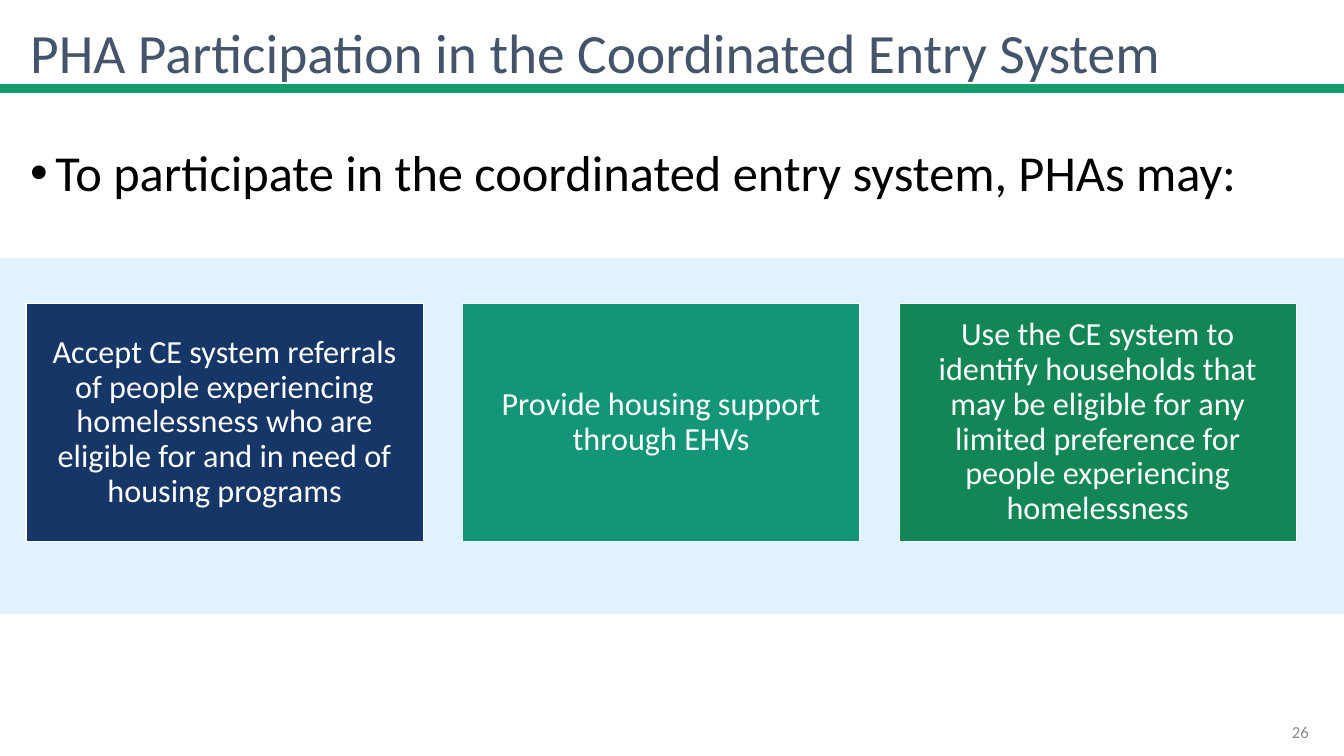
from dataclasses import dataclass

from lxml import etree
from pptx import Presentation
from pptx.dml.color import RGBColor
from pptx.enum.shapes import MSO_CONNECTOR, MSO_SHAPE
from pptx.enum.text import MSO_ANCHOR, PP_ALIGN
from pptx.oxml.ns import qn
from pptx.util import Inches, Pt

RECT, STRAIGHT = MSO_SHAPE.RECTANGLE, MSO_CONNECTOR.STRAIGHT
TOP, MIDDLE = MSO_ANCHOR.TOP, MSO_ANCHOR.MIDDLE
LEFT, CENTER, RIGHT = PP_ALIGN.LEFT, PP_ALIGN.CENTER, PP_ALIGN.RIGHT


@dataclass(frozen=True)
class Theme:
    font: str = "Calibri"
    title: str = "44546A"
    body: str = "000000"
    page: str = "8C8C8C"
    light: str = "FFFFFF"
    rule: str = "149B6A"
    band: str = "DFF2FD"
    cards: tuple = ("163667", "139677", "128654")
    title_size: float = 39.6
    body_size: int = 36
    card_size: int = 23
    page_size: int = 12


class Deck:
    """Draws themed elements on a slide, placed in percent of its size."""

    def __init__(self, theme):
        self.t = theme
        self.prs = Presentation()
        self.prs.slide_width, self.prs.slide_height = Inches(13.33), Inches(7.5)
        self.s = self.prs.slides.add_slide(self.prs.slide_layouts[5])

    def box(self, x, y, w, h):
        sw, sh = self.prs.slide_width, self.prs.slide_height
        return [int(share * side / 100) for share, side in zip((x, y, w, h), (sw, sh, sw, sh))]

    def set_text(self, sp, text, size, color, align=LEFT, anchor=MIDDLE, spacing=0.9):
        tf = sp.text_frame
        tf.word_wrap, tf.vertical_anchor = True, anchor
        p = tf.paragraphs[0]
        p.text, p.alignment, p.line_spacing = text, align, spacing
        p.font.name, p.font.size = self.t.font, Pt(size)
        p.font.color.rgb = RGBColor.from_string(color)
        return p

    def title(self, text, *place):
        sp = self.s.shapes.title
        sp.left, sp.top, sp.width, sp.height = self.box(*place)
        self.set_text(sp, text, self.t.title_size, self.t.title)

    def text(self, text, size, color, *place, **style):
        sp = self.s.shapes.add_textbox(*self.box(*place))
        return self.set_text(sp, text, size, color, **style)

    def bullet(self, text, *place):
        p = self.text(text, self.t.body_size, self.t.body, *place, anchor=TOP)
        p.space_before = Pt(10)
        pPr = p._p.get_or_add_pPr()
        pPr.set("marL", str(Inches(0.25)))
        pPr.set("indent", str(-Inches(0.25)))
        bullet_font = etree.Element(qn("a:buFont"), typeface="Arial")
        bullet_char = etree.Element(qn("a:buChar"), char="•")
        pPr.find(qn("a:spcBef")).addnext(bullet_font)
        bullet_font.addnext(bullet_char)

    def rect(self, fill, line, *place):
        sp = self.s.shapes.add_shape(RECT, *self.box(*place))
        sp.shadow.inherit = False
        sp.fill.solid()
        sp.fill.fore_color.rgb = RGBColor.from_string(fill)
        sp.line.color.rgb = RGBColor.from_string(line)
        sp.line.width = Pt(1)
        return sp

    def card(self, text, fill, *place):
        sp = self.rect(fill, self.t.light, *place)
        tf = sp.text_frame
        tf.margin_left = tf.margin_right = tf.margin_top = tf.margin_bottom = Inches(0.1)
        self.set_text(sp, text, self.t.card_size, self.t.light, align=CENTER)

    def rule(self, y):
        x, top, w, _ = self.box(0, y, 100, 0)
        line = self.s.shapes.add_connector(STRAIGHT, x, top, x + w, top)
        line.line.color.rgb = RGBColor.from_string(self.t.rule)
        line.line.width = Pt(6)
        etree.SubElement(line._element.spPr, qn("a:effectLst"))


def main():
    theme = Theme()
    deck = Deck(theme)
    deck.rule(11.73)
    deck.rect(theme.band, theme.band, 0, 34.27, 100, 46.93)
    deck.title("PHA Participation in the Coordinated Entry System", 1.5, 2.8, 99.32, 9.2)
    deck.bullet("To participate in the coordinated entry system, PHAs may:", 1.5, 18.93, 96.62, 73.73)
    actions = (
        "Accept CE system referrals of people experiencing homelessness "
        "who are eligible for and in need of housing programs",
        "Provide housing support through EHVs",
        "Use the CE system to identify households that may be eligible for any "
        "limited preference for people experiencing homelessness",
    )
    width, pitch = 29.56, 32.48
    for i, (action, fill) in enumerate(zip(actions, theme.cards)):
        deck.card(action, fill, 1.95 + i * pitch, 40.13, width, 31.47)
    deck.text("26", theme.page_size, theme.page, 75.62, 94.13, 22.5, 5.33, align=RIGHT, spacing=1.0)
    deck.prs.save("out.pptx")


if __name__ == "__main__":
    main()
